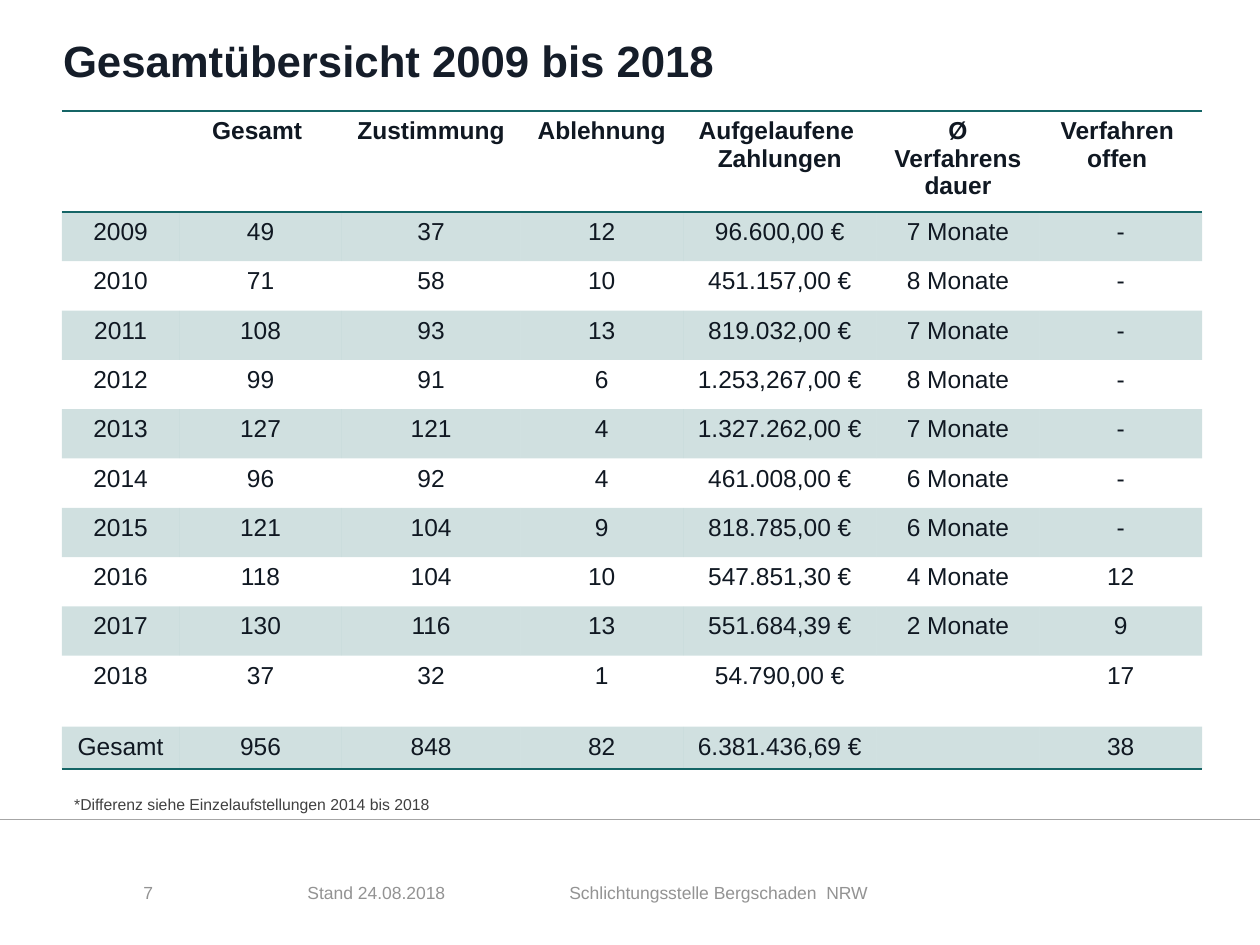
from lxml import etree
from pptx import Presentation
from pptx.dml.color import RGBColor
from pptx.enum.shapes import MSO_CONNECTOR
from pptx.enum.text import MSO_ANCHOR, MSO_AUTO_SIZE, PP_ALIGN
from pptx.oxml.ns import qn
from pptx.util import Pt

STRAIGHT = MSO_CONNECTOR.STRAIGHT
TOP = MSO_ANCHOR.TOP
GROW = MSO_AUTO_SIZE.SHAPE_TO_FIT_TEXT
LEFT, CENTER = PP_ALIGN.LEFT, PP_ALIGN.CENTER

TEAL = RGBColor(0x15, 0x65, 0x66)
NAVY = RGBColor(0x15, 0x1D, 0x29)
INK = RGBColor(0x10, 0x18, 0x22)
DARK_GREY = RGBColor(0x40, 0x40, 0x40)
FOOTER_GREY = RGBColor(0x93, 0x93, 0x93)
RULE_GREY = RGBColor(0xA6, 0xA6, 0xA6)

FONT = "Arial"
CELL_SIZE = 14
NO_STYLE = "{2D5ABB26-0587-4C30-8999-92F81FD0307C}"
SLIDE_W, SLIDE_H = 720, 540
COL_WIDTHS = [67, 93, 102, 93, 110.6, 93, 93]
ROW_HEIGHTS = [57.7] + [28.2] * 9 + [40.6, 24]

ROWS = [
    ["", "Gesamt ", "Zustimmung", "Ablehnung", "Aufgelaufene \nZahlungen",
     "Ø Verfahrensdauer", "Verfahren \noffen "],
    ["2009", "49", "37", "12", "96.600,00 €", "7 Monate", "-"],
    ["2010", "71", "58", "10", "451.157,00 €", "8 Monate", "-"],
    ["2011", "108", "93", "13", "819.032,00 €", "7 Monate", "-"],
    ["2012", "99", "91", "6", "1.253,267,00 €", "8 Monate", "-"],
    ["2013", "127", "121", "4", "1.327.262,00 €", "7 Monate", "-"],
    ["2014", "96", "92", "4", "461.008,00 €", "6 Monate", "-"],
    ["2015", "121", "104", "9", "818.785,00 €", "6 Monate", "-"],
    ["2016", "118", "104", "10", "547.851,30 €", "4 Monate", "12"],
    ["2017", "130", "116", "13", "551.684,39 €", "2 Monate", "9"],
    ["2018", "37", "32", "1", "54.790,00 €", "", "17"],
    ["Gesamt", "956", "848", "82", "6.381.436,69 €", "", "38"],
]

FOOTERS = [
    ("7", 82, 94),
    ("Stand 24.08.2018", 175.7, 84),
    (" Schlichtungsstelle Bergschaden  NRW", 322.6, 282),
]


def set_attrs(obj, **values):
    for name, value in values.items():
        setattr(obj, name, value)


def set_font(r, size, color, bold=False):
    set_attrs(r.font, name=FONT, size=Pt(size), bold=bold)
    r.font.color.rgb = color


def fill_text(tf, text, size, color, bold=False, inset=(7.2, 3.6)):
    x, y = map(Pt, inset)
    set_attrs(tf, word_wrap=True, vertical_anchor=TOP, margin_left=x,
              margin_right=x, margin_top=y, margin_bottom=y)
    p = tf.paragraphs[0]
    p.alignment = LEFT
    r = p.add_run()
    r.text = text
    set_font(r, size, color, bold)


def add_title(s, text):
    sp = s.shapes.title
    set_attrs(sp, left=Pt(28.8), top=Pt(15.8), width=Pt(658), height=Pt(37.4))
    fill_text(sp.text_frame, text, 25, NAVY, bold=True)
    sp.text_frame.auto_size = GROW


def add_text(s, text, x, y, w, h, size, color, **options):
    sp = s.shapes.add_textbox(Pt(x), Pt(y), Pt(w), Pt(h))
    fill_text(sp.text_frame, text, size, color, **options)


def add_rule(s, y):
    line = s.shapes.add_connector(STRAIGHT, 0, Pt(y), Pt(SLIDE_W), Pt(y))
    line.line.width = Pt(0.5)
    line.line.color.rgb = RULE_GREY
    etree.SubElement(line._element.spPr, qn("a:effectLst"))


def add_border(tc_pr, side, index):
    ln = etree.Element(qn("a:" + side), w=str(Pt(1)))
    fill = etree.SubElement(ln, qn("a:solidFill"))
    etree.SubElement(fill, qn("a:srgbClr"), val=str(TEAL))
    tc_pr.insert(index, ln)


def format_cell(cell, text, shaded, bold, sides):
    cell.text = text
    cell.vertical_anchor = TOP
    for p in cell.text_frame.paragraphs:
        p.alignment = CENTER
        for r in p.runs:
            set_font(r, CELL_SIZE, INK, bold)
        if not p.runs:
            etree.SubElement(p._p, qn("a:endParaRPr"), sz=str(CELL_SIZE * 100))
    tc_pr = cell._tc.get_or_add_tcPr()
    if shaded:
        cell.fill.solid()
        cell.fill.fore_color.rgb = TEAL
        color = tc_pr.find(".//" + qn("a:srgbClr"))
        etree.SubElement(color, qn("a:alpha"), val="20000")
    else:
        cell.fill.background()
    for index, side in enumerate(sides):
        add_border(tc_pr, side, index)


def add_overview_table(s, x, y):
    frame = s.shapes.add_table(len(ROWS), len(COL_WIDTHS), Pt(x), Pt(y),
                               Pt(sum(COL_WIDTHS)), Pt(sum(ROW_HEIGHTS)))
    table = frame.table
    set_attrs(table, first_row=False, horz_banding=False)
    table._tbl.tblPr.find(qn("a:tableStyleId")).text = NO_STYLE
    for column, width in zip(table.columns, COL_WIDTHS):
        column.width = Pt(width)
    for row, height in zip(table.rows, ROW_HEIGHTS):
        row.height = Pt(height)
    borders = {0: ["lnT", "lnB"], len(ROWS) - 1: ["lnB"]}
    for i, values in enumerate(ROWS):
        for j, text in enumerate(values):
            format_cell(table.cell(i, j), text, shaded=i % 2 == 1,
                        bold=i == 0, sides=borders.get(i, []))


def main():
    prs = Presentation()
    set_attrs(prs, slide_width=Pt(SLIDE_W), slide_height=Pt(SLIDE_H))
    s = prs.slides.add_slide(prs.slide_layouts[5])
    add_rule(s, 468)
    add_title(s, "Gesamtübersicht 2009 bis 2018")
    add_text(s, "*Differenz siehe Einzelaufstellungen 2014 bis 2018",
             35.3, 450.7, 347, 18, 9, DARK_GREY)
    for text, x, w in FOOTERS:
        add_text(s, text, x, 504, w, 15, 10, FOOTER_GREY, inset=(0, 0))
    add_overview_table(s, 35.4, 63.4)
    prs.save("out.pptx")


if __name__ == "__main__":
    main()
